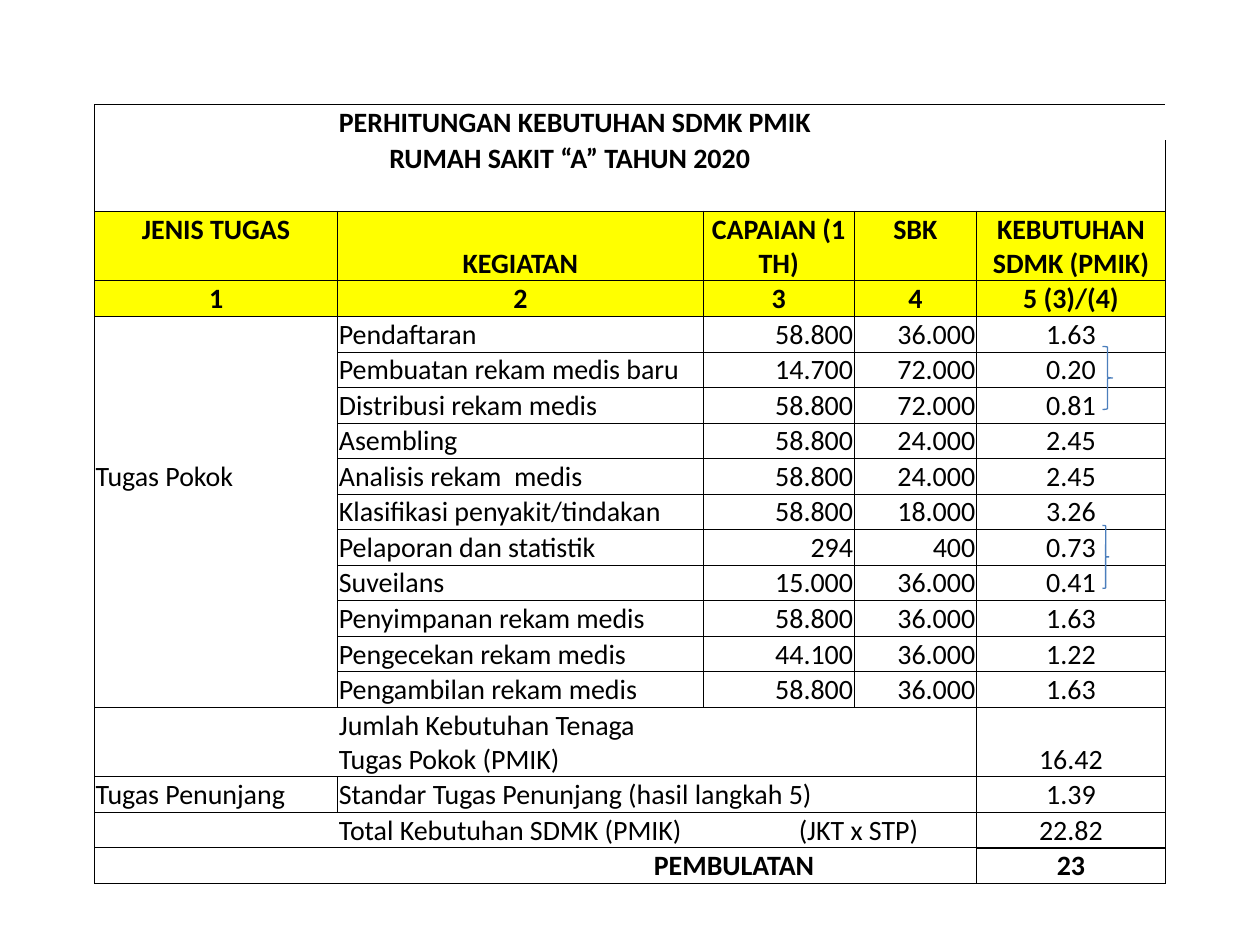
from lxml import etree
from pptx import Presentation
from pptx.dml.color import RGBColor
from pptx.enum.shapes import MSO_SHAPE
from pptx.enum.text import MSO_ANCHOR, PP_ALIGN
from pptx.oxml.ns import qn
from pptx.util import Inches, Pt

LEFT, CENTER, RIGHT = PP_ALIGN.LEFT, PP_ALIGN.CENTER, PP_ALIGN.RIGHT
TOP, BOTTOM = MSO_ANCHOR.TOP, MSO_ANCHOR.BOTTOM
BRACE = MSO_SHAPE.RIGHT_BRACE

COL_WIDTHS = [1.93, 2.9, 1.2, 0.97, 1.5]
ROW_H = 0.27
TALL_ROWS = {3, 16}
HEADER_ROWS = {3, 4}
BOLD_ROWS = {0, 1, 3, 4, 19}
ALIGNS = [LEFT, LEFT, RIGHT, RIGHT, CENTER]

ROWS = [
    ["", "PERHITUNGAN KEBUTUHAN SDMK PMIK", "", "", ""],
    ["", "RUMAH SAKIT “A” TAHUN 2020", "", "", ""],
    ["", "", "", "", ""],
    ["JENIS TUGAS", "KEGIATAN", "CAPAIAN (1 TH)", "SBK", "KEBUTUHAN SDMK (PMIK)"],
    ["1", "2", "3", "4", "5 (3)/(4)"],
    ["", "Pendaftaran", "58.800", "36.000", "1.63"],
    ["", "Pembuatan rekam medis baru", "14.700", "72.000", "0.20"],
    ["", "Distribusi rekam medis", "58.800", "72.000", "0.81"],
    ["", "Asembling", "58.800", "24.000", "2.45"],
    ["Tugas Pokok", "Analisis rekam  medis", "58.800", "24.000", "2.45"],
    ["", "Klasifikasi penyakit/tindakan", "58.800", "18.000", "3.26"],
    ["", "Pelaporan dan statistik", "294", "400", "0.73"],
    ["", "Suveilans", "15.000", "36.000", "0.41"],
    ["", "Penyimpanan rekam medis", "58.800", "36.000", "1.63"],
    ["", "Pengecekan rekam medis", "44.100", "36.000", "1.22"],
    ["", "Pengambilan rekam medis", "58.800", "36.000", "1.63"],
    ["", "Jumlah Kebutuhan Tenaga Tugas Pokok (PMIK)", "", "", "16.42"],
    ["Tugas Penunjang", "Standar Tugas Penunjang (hasil langkah 5)", "", "", "1.39"],
    ["", "Total Kebutuhan SDMK (PMIK)", "(JKT x STP)", "", "22.82"],
    ["", "PEMBULATAN", "", "", "23"],
]
# (first row, first column, last row, last column)
MERGES = [(0, 1, 0, 4), (1, 1, 1, 2), (17, 1, 17, 2), (18, 2, 18, 3), (19, 1, 19, 2)]
OPEN_BLOCKS = [(0, 0, 2, 4), (5, 0, 15, 0), (16, 0, 16, 3),
               (17, 1, 17, 3), (18, 0, 18, 3), (19, 0, 19, 3)]
INDENTS = {(1, 1): 0.4, (18, 2): 0.75, (19, 1): 2.5}
THICK_EDGES = {(18, 4, "lnB"), (19, 4, "lnT")}
SIDES = {"lnL": (0, -1), "lnR": (0, 1), "lnT": (-1, 0), "lnB": (1, 0)}


def rgb(value):
    return RGBColor.from_string(value)


def block_of(r, c):
    """Return the block without inner borders that holds the cell, or the cell itself."""
    for r0, c0, r1, c1 in OPEN_BLOCKS:
        if r0 <= r <= r1 and c0 <= c <= c1:
            return r0, c0, r1, c1
    return r, c


prs = Presentation()
prs.slide_width, prs.slide_height = Inches(10), Inches(7.5)
s = prs.slides.add_slide(prs.slide_layouts[6])

table = s.shapes.add_table(len(ROWS), len(COL_WIDTHS), Inches(0.75), Inches(0.83),
                           Inches(8.5), Inches(6.07)).table
table.first_row = table.horz_banding = False
for col, width in zip(table.columns, COL_WIDTHS):
    col.width = Inches(width)
for i, row in enumerate(table.rows):
    row.height = Inches(ROW_H * (2 if i in TALL_ROWS else 1))
for r0, c0, r1, c1 in MERGES:
    table.cell(r0, c0).merge(table.cell(r1, c1))

for i, texts in enumerate(ROWS):
    for j, text in enumerate(texts):
        cell = table.cell(i, j)
        header = i in HEADER_ROWS
        layout = {
            "margin_left": Inches(0.01 + INDENTS.get((i, j), 0)),
            "margin_right": Inches(0.01),
            "margin_top": Inches(0.01),
            "margin_bottom": 0,
            "vertical_anchor": TOP if text in ("JENIS TUGAS", "SBK") else BOTTOM,
        }
        for name, value in layout.items():
            setattr(cell, name, value)
        if header:
            cell.fill.solid()
            cell.fill.fore_color.rgb = rgb("FFFF00")
        else:
            cell.fill.background()

        p = cell.text_frame.paragraphs[0]
        p.alignment = CENTER if header else ALIGNS[j]
        if (i, j) in INDENTS:
            p.alignment = LEFT
        if text:
            run = p.add_run()
            run.text = text
            font = {"name": "Calibri", "size": Pt(16), "bold": i in BOLD_ROWS}
            for name, value in font.items():
                setattr(run.font, name, value)
            run.font.color.rgb = rgb("000000")
        else:
            etree.SubElement(p._p, qn("a:endParaRPr"), sz="1600")

        tc_pr = cell._tc.get_or_add_tcPr()
        for k, (side, (di, dj)) in enumerate(SIDES.items()):
            width = Pt(1 if (i, j, side) in THICK_EDGES else 0.5)
            ln = etree.Element(qn("a:" + side), w=str(width))
            if block_of(i, j) == block_of(i + di, j + dj):
                etree.SubElement(ln, qn("a:noFill"))
            else:
                fill = etree.SubElement(ln, qn("a:solidFill"))
                etree.SubElement(fill, qn("a:srgbClr"), val="000000")
            tc_pr.insert(k, ln)

for top, width in [(2.75, 0.08), (4.17, 0.05)]:
    sp = s.shapes.add_shape(BRACE, Inches(8.75), Inches(top), Inches(width), Inches(0.5))
    sp.shadow.inherit = False
    sp.fill.background()
    sp.line.color.rgb = rgb("4B7EBC")
    sp.line.width = Pt(0.75)

prs.save("out.pptx")
